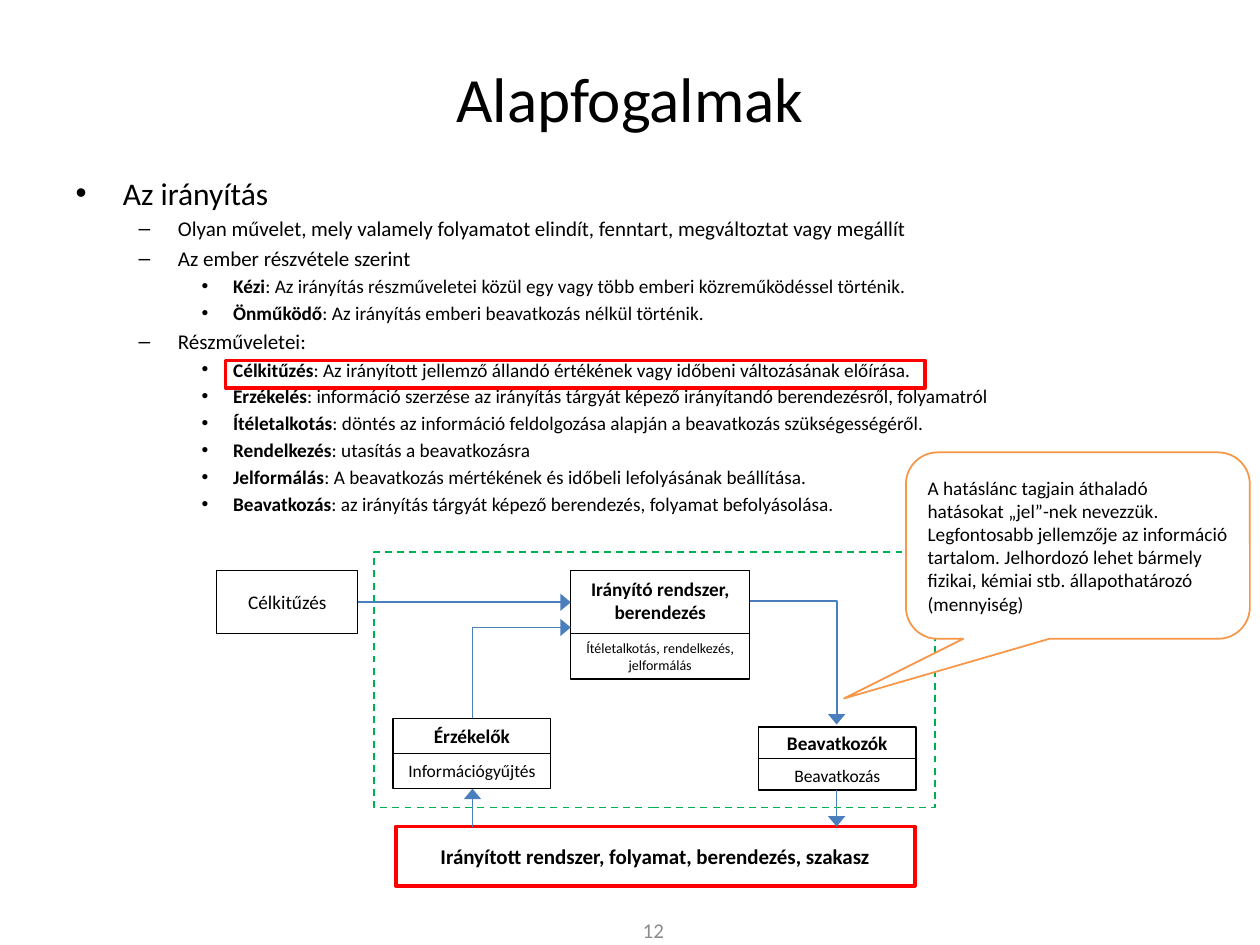
from lxml import etree
from pptx import Presentation
from pptx.dml.color import RGBColor
from pptx.enum.dml import MSO_LINE
from pptx.enum.shapes import MSO_CONNECTOR, MSO_SHAPE
from pptx.enum.text import MSO_ANCHOR, MSO_AUTO_SIZE, PP_ALIGN
from pptx.oxml.ns import qn
from pptx.util import Inches, Pt

BLACK = RGBColor(0x00, 0x00, 0x00)
WHITE = RGBColor(0xFF, 0xFF, 0xFF)
GRAY = RGBColor(0x8C, 0x8C, 0x8C)
RED = RGBColor(0xFF, 0x00, 0x00)
GREEN = RGBColor(0x00, 0xB0, 0x50)
ORANGE = RGBColor(0xF7, 0x96, 0x46)
BLUE = RGBColor(0x4B, 0x7E, 0xBC)

LEVEL_SIZES = (18, 12, 11)
# Level, bold term, remaining text
OUTLINE = [
    (0, "", "Az irányítás"),
    (1, "", "Olyan művelet, mely valamely folyamatot elindít, fenntart, "
            "megváltoztat vagy megállít"),
    (1, "", "Az ember részvétele szerint"),
    (2, "Kézi", ": Az irányítás részműveletei közül egy vagy több emberi "
                "közreműködéssel történik."),
    (2, "Önműködő", ": Az irányítás emberi beavatkozás nélkül történik."),
    (1, "", "Részműveletei:"),
    (2, "Célkitűzés", ": Az irányított jellemző állandó értékének vagy időbeni "
                      "változásának előírása."),
    (2, "Érzékelés", ": információ szerzése az irányítás tárgyát képező "
                     "irányítandó berendezésről, folyamatról"),
    (2, "Ítéletalkotás", ": döntés az információ feldolgozása alapján a "
                         "beavatkozás szükségességéről."),
    (2, "Rendelkezés", ": utasítás a beavatkozásra"),
    (2, "Jelformálás", ": A beavatkozás mértékének és időbeli lefolyásának "
                       "beállítása."),
    (2, "Beavatkozás", ": az irányítás tárgyát képező berendezés, folyamat "
                       "befolyásolása."),
]
CALLOUT = ("A hatáslánc tagjain áthaladó hatásokat „jel”-nek nevezzük. "
           "Legfontosabb jellemzője az információ tartalom. Jelhordozó lehet "
           "bármely fizikai, kémiai stb. állapothatározó (mennyiség)")


def add_span(para, text, size, bold=False, color=BLACK, name="Calibri"):
    span = para.add_run()
    span.text = text
    font = span.font
    font.name, font.size, font.bold = name, Pt(size), bold
    font.color.rgb = color


def move(shape, box):
    shape.left, shape.top, shape.width, shape.height = map(Inches, box)


def add_outlined(page, box, color, width, fill=None, kind=MSO_SHAPE.RECTANGLE):
    shape = page.shapes.add_shape(kind, *map(Inches, box))
    shape.shadow.inherit = False
    if fill is None:
        shape.fill.background()
    else:
        shape.fill.solid()
        shape.fill.fore_color.rgb = fill
    shape.line.color.rgb = color
    shape.line.width = Pt(width)
    return shape


def add_block(page, box, text, size, bold=False, anchor=MSO_ANCHOR.MIDDLE,
              color=BLACK, width=0.75):
    """Add a white diagram box and return its paragraph."""
    block = add_outlined(page, box, color, width, WHITE)
    frame = block.text_frame
    frame.word_wrap = True
    frame.vertical_anchor = anchor
    para = frame.paragraphs[0]
    para.alignment = PP_ALIGN.CENTER
    para.space_after = Pt(10)
    add_span(para, text, size, bold)
    return para


def add_arrow(page, tip, start, bent=False):
    """Point an arrow at tip; a bent one leaves the tip horizontally."""
    ends = map(Inches, (*tip, *start))
    kind = MSO_CONNECTOR.ELBOW if bent else MSO_CONNECTOR.STRAIGHT
    return style_arrow(page.shapes.add_connector(kind, *ends), bent, "headEnd")


def style_arrow(arrow, bent, end):
    arrow.line.color.rgb = BLUE
    arrow.line.width = Pt(1)
    properties = arrow._element.spPr
    if bent:
        properties.find(qn("a:prstGeom")).set("prst", "bentConnector2")
    etree.SubElement(properties.find(qn("a:ln")), qn(f"a:{end}"),
                     type="triangle", w="lg", len="med")
    etree.SubElement(properties, qn("a:effectLst"))
    return arrow


def add_title(page, box):
    title = page.shapes.title
    move(title, box)
    title.text_frame.vertical_anchor = MSO_ANCHOR.MIDDLE
    para = title.text_frame.paragraphs[0]
    para.alignment = PP_ALIGN.CENTER
    add_span(para, "Alapfogalmak", 36)


def add_outline(page, box):
    body = page.placeholders[1]
    move(body, box)
    frame = body.text_frame
    frame.auto_size = MSO_AUTO_SIZE.NONE
    for index, (level, term, text) in enumerate(OUTLINE):
        para = frame.add_paragraph() if index else frame.paragraphs[0]
        para.level = level
        if term:
            add_span(para, term, LEVEL_SIZES[level], bold=True)
        add_span(para, text, LEVEL_SIZES[level])


def add_page_number(page, box):
    number = page.shapes.add_textbox(*map(Inches, box))
    frame = number.text_frame
    frame.word_wrap = True
    frame.vertical_anchor = MSO_ANCHOR.MIDDLE
    para = frame.paragraphs[0]
    para.alignment = PP_ALIGN.CENTER
    add_span(para, "12", 12, color=GRAY)


def add_diagram(page, box):
    """Draw the control loop; box is the dashed frame of the controller."""
    left, top, width, height = box

    def at(x, y, *size):
        return (left + x, top + y, *size)

    add_block(page, at(-1.25, 0.15, 1.12, 0.5), "Célkitűzés", 11)
    tasks = add_block(page, at(1.56, 0.65, 1.42, 0.36), "Ítéletalkotás", 8,
                      anchor=MSO_ANCHOR.TOP)
    add_span(tasks, ", ", 8, name="Times New Roman")
    add_span(tasks, "rendelkezés", 8)
    add_span(tasks, ",", 8, name="Times New Roman")
    tasks.add_line_break()
    add_span(tasks, "jelformálás", 8)
    add_block(page, at(1.56, 0.15, 1.42, 0.5), "Irányító rendszer, berendezés",
              11, True, MSO_ANCHOR.TOP)
    add_block(page, at(0.17, 2.18, 4.12, 0.47),
              "Irányított rendszer, folyamat, berendezés, szakasz", 12, True,
              color=RED, width=2.25)
    for x, y, row, name, task in (
            (3.05, 1.39, 0.25, "Beavatkozók", "Beavatkozás"),
            (0.15, 1.32, 0.28, "Érzékelők", "Információgyűjtés")):
        add_block(page, at(x, y + row, 1.25, row), task, 10,
                  anchor=MSO_ANCHOR.TOP)
        add_block(page, at(x, y, 1.25, row), name, 11, True)

    add_arrow(page, at(1.56, 0.4), at(-0.13, 0.4))
    add_arrow(page, at(1.56, 0.6), at(0.78, 1.32), bent=True)
    add_arrow(page, at(3.67, 2.18), at(3.67, 1.89))
    add_arrow(page, at(0.78, 1.88), at(0.78, 2.18))
    to_actuators = page.shapes.add_connector(
        MSO_CONNECTOR.ELBOW, *map(Inches, (*at(2.98, 0.39), *at(3.67, 1.37))))
    style_arrow(to_actuators, True, "tailEnd")

    frame = add_outlined(page, box, GREEN, 1)
    frame.line.dash_style = MSO_LINE.DASH


def add_callout(page, box):
    callout = add_outlined(page, box, ORANGE, 1, WHITE,
                           MSO_SHAPE.ROUNDED_RECTANGULAR_CALLOUT)
    for index, value in enumerate((-0.68, 0.82, 0.17)):
        callout.adjustments[index] = value
    frame = callout.text_frame
    frame.word_wrap = True
    frame.vertical_anchor = MSO_ANCHOR.MIDDLE
    para = frame.paragraphs[0]
    para.alignment = PP_ALIGN.LEFT
    add_span(para, CALLOUT, 11)


def main():
    deck = Presentation()
    deck.slide_width, deck.slide_height = Inches(10), Inches(7.5)
    page = deck.slides.add_slide(deck.slide_layouts.get_by_name("Title and Content"))
    add_title(page, (0.5, 0.3, 9, 0.95))
    add_outline(page, (0.5, 1.33, 9, 5.7))
    add_page_number(page, (4.77, 7.26, 0.83, 0.24))
    add_diagram(page, (2.97, 4.38, 4.45, 2.03))
    add_callout(page, (7.19, 3.59, 2.73, 1.48))
    add_outlined(page, (1.79, 2.86, 5.55, 0.22), RED, 2)
    deck.save("out.pptx")


if __name__ == "__main__":
    main()
